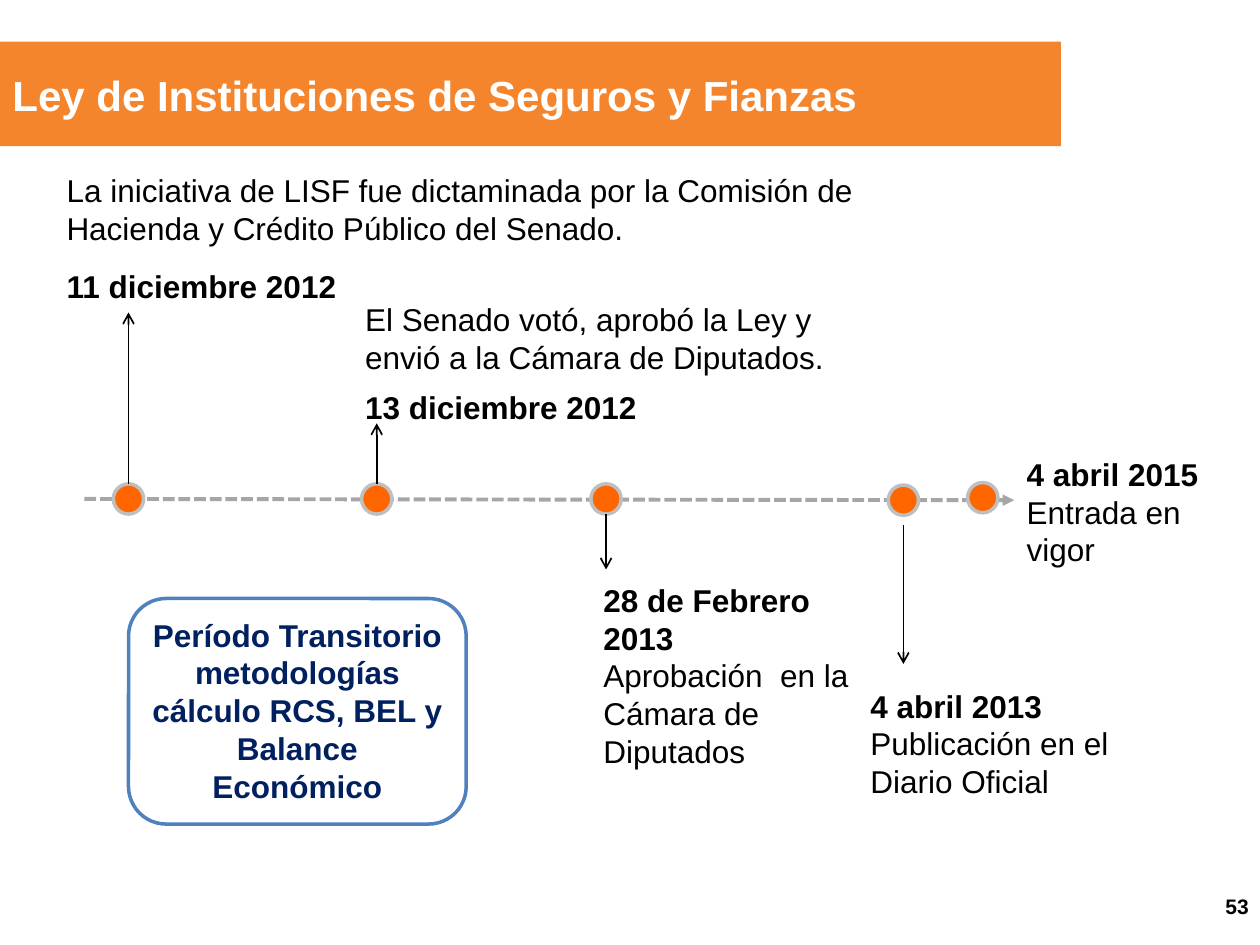
from dataclasses import dataclass

from lxml.etree import SubElement
from pptx import Presentation
from pptx.dml.color import RGBColor
from pptx.enum.dml import MSO_LINE_DASH_STYLE as Dash
from pptx.enum.shapes import MSO_CONNECTOR as Link, MSO_SHAPE as Form
from pptx.enum.text import MSO_ANCHOR as Anchor, PP_ALIGN as Align
from pptx.oxml.ns import qn
from pptx.util import Inches, Pt


@dataclass(frozen=True)
class Theme:
    font: str = "Arial"
    banner: str = "F5852C"
    marker: str = "FF6600"
    ring: str = "BFBFBF"
    axis: str = "A6A6A6"
    frame: str = "4F81BD"
    navy: str = "002060"
    ink: str = "000000"
    paper: str = "FFFFFF"
    title: int = 24
    body: int = 18
    small: int = 12


@dataclass(frozen=True)
class Box:
    left: float
    top: float
    width: float
    height: float

    def emu(self) -> list:
        return [Inches(n) for n in (self.left, self.top, self.width, self.height)]


@dataclass(frozen=True)
class Line:
    text: str
    bold: bool = False


@dataclass(frozen=True)
class Milestone:
    center: float
    top: float
    arrow: tuple[float, float] | None
    notes: tuple[tuple[Box, tuple[Line, ...]], ...]


THEME = Theme()
DOT = 0.24
MILESTONES = (
    Milestone(1.02, 3.84, (3.84, 2.48), (
        (Box(0.43, 2.07, 2.5, 0.4), (Line("11 diciembre 2012", True),)),
        (Box(0.43, 1.31, 6.73, 0.71), (
            Line("La iniciativa de LISF fue dictaminada por la Comisión de "
                 "Hacienda y Crédito Público del Senado."),)),
    )),
    Milestone(2.99, 3.84, (3.84, 3.36), (
        (Box(2.8, 3.03, 2.5, 0.4), (Line("13 diciembre 2012", True),)),
        (Box(2.8, 2.33, 4.65, 0.71), (
            Line("El Senado votó, aprobó la Ley y"),
            Line("envió a la Cámara de Diputados."))),
    )),
    Milestone(4.81, 3.84, (4.08, 4.52), (
        (Box(4.69, 4.56, 2.35, 1.62), (
            Line("28 de Febrero 2013", True),
            Line("Aprobación  en la Cámara de Diputados"))),
    )),
    Milestone(7.17, 3.85, (4.17, 5.27), (
        (Box(6.81, 5.4, 3.19, 1.01), (
            Line("4 abril 2013", True),
            Line("Publicación en el"),
            Line("Diario Oficial"))),
    )),
    Milestone(7.8, 3.83, None, (
        (Box(8.05, 3.56, 1.89, 1.01), (
            Line("4 abril 2015", True),
            Line("Entrada en vigor"))),
    )),
)


def rgb(color: str) -> RGBColor:
    return RGBColor.from_string(color)


def write(shape, lines: tuple[Line, ...], size: int = THEME.body,
          color: str = THEME.ink, align: Align = Align.LEFT,
          anchor: Anchor = Anchor.TOP) -> None:
    frame = shape.text_frame
    frame.word_wrap = True
    frame.vertical_anchor = anchor
    for index, line in enumerate(lines):
        paragraph = frame.add_paragraph() if index else frame.paragraphs[0]
        paragraph.text = line.text
        paragraph.alignment = align
        font = paragraph.font
        font.name, font.size, font.bold = THEME.font, Pt(size), line.bold
        font.color.rgb = rgb(color)


def add_text(slide, box: Box, lines: tuple[Line, ...], **style) -> None:
    write(slide.shapes.add_textbox(*box.emu()), lines, **style)


def add_form(slide, form: Form, box: Box, fill: str, outline: str | None = None):
    shape = slide.shapes.add_shape(form, *box.emu())
    shape.shadow.inherit = False
    shape.fill.solid()
    shape.fill.fore_color.rgb = rgb(fill)
    if outline:
        shape.line.color.rgb = rgb(outline)
        shape.line.width = Pt(2)
    else:
        shape.line.fill.background()
    return shape


def add_arrow(slide, start: tuple[float, float], end: tuple[float, float],
              color: str = THEME.ink, width: float = 1, head: str = "arrow"):
    arrow = slide.shapes.add_connector(Link.STRAIGHT, *map(Inches, start + end))
    arrow.line.color.rgb = rgb(color)
    arrow.line.width = Pt(width)
    SubElement(arrow.line._get_or_add_ln(), qn("a:tailEnd"), type=head)
    SubElement(arrow._element.spPr, qn("a:effectLst"))
    return arrow


def add_milestone(slide, stone: Milestone) -> None:
    add_form(slide, Form.OVAL, Box(stone.center - DOT / 2, stone.top, DOT, DOT),
             THEME.marker, THEME.ring)
    if stone.arrow:
        start, end = stone.arrow
        add_arrow(slide, (stone.center, start), (stone.center, end))
    for box, lines in stone.notes:
        add_text(slide, box, lines)


def main() -> None:
    """Build the timeline slide of the insurance and surety law."""
    deck = Presentation()
    deck.slide_width, deck.slide_height = Inches(10), Inches(7.5)
    slide = deck.slides.add_slide(deck.slide_layouts[6])
    add_form(slide, Form.RECTANGLE, Box(0, 0.33, 8.42, 0.83), THEME.banner)
    add_text(slide, Box(0, 0.5, 8.41, 0.5),
             (Line("Ley de Instituciones de Seguros y Fianzas", True),),
             size=THEME.title, color=THEME.paper)
    axis = add_arrow(slide, (0.67, 3.96), (8.05, 3.97), THEME.axis, 2.25, "triangle")
    axis.line.dash_style = Dash.SQUARE_DOT
    for stone in MILESTONES:
        add_milestone(slide, stone)
    period = add_form(slide, Form.ROUNDED_RECTANGLE, Box(1.02, 4.75, 2.68, 1.79),
                      THEME.paper, THEME.frame)
    write(period, (Line("Período Transitorio metodologías cálculo RCS, BEL y "
                        "Balance Económico", True),),
          color=THEME.navy, align=Align.CENTER)
    add_text(slide, Box(7.68, 6.99, 2.33, 0.4), (Line("53", True),),
             size=THEME.small, align=Align.RIGHT, anchor=Anchor.MIDDLE)
    deck.save("out.pptx")


if __name__ == "__main__":
    main()
